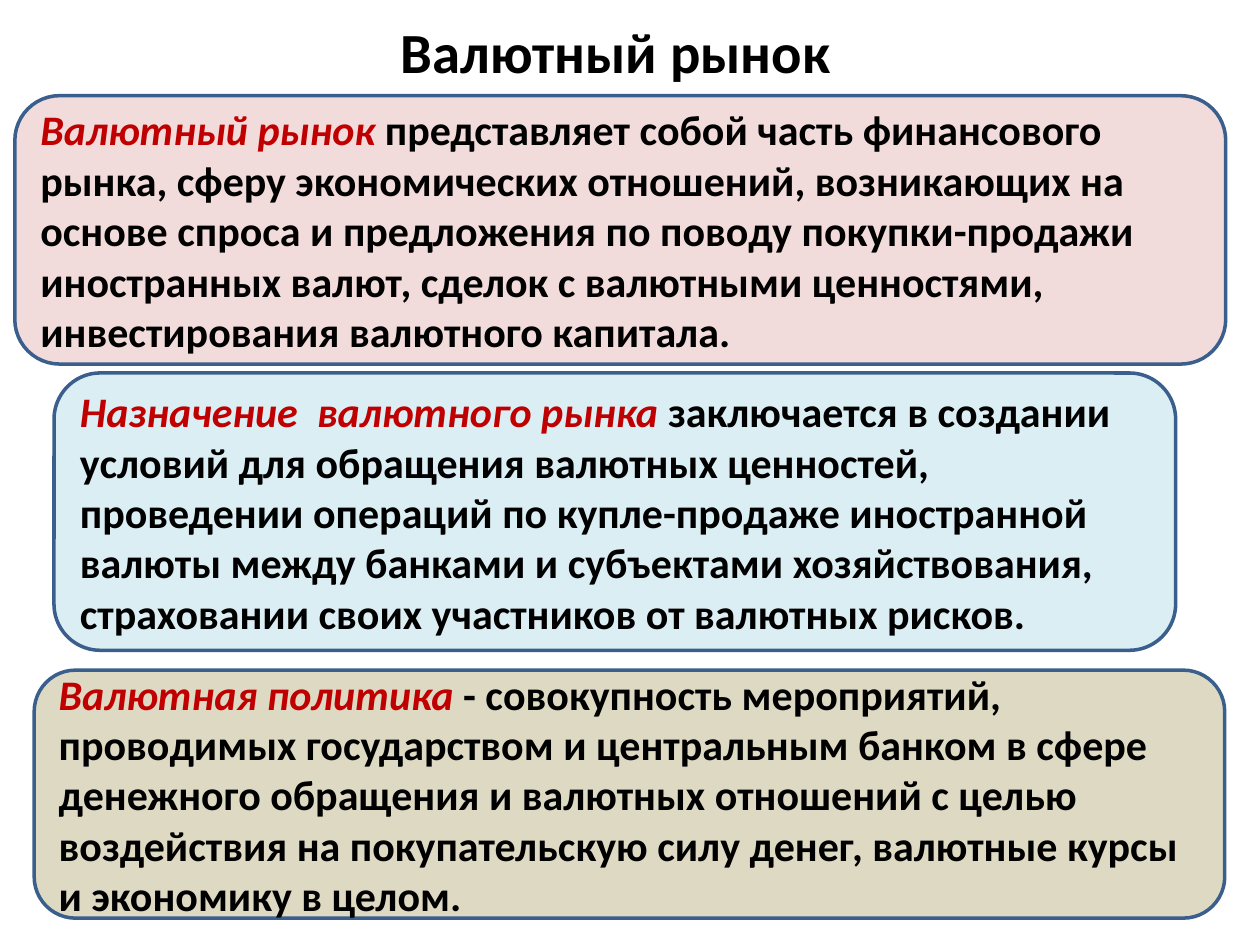
import dataclasses
import pptx
import pptx.util
import pptx.dml.color
import pptx.enum.shapes
import pptx.enum.text
from pptx.util import Cm


@dataclasses.dataclass(frozen=True)
class Theme:
    font: str = "Calibri"
    title_size: float = 32.4
    body_size: float = 24
    line_width: float = 2
    text: str = "000000"
    term: str = "C00000"
    outline: str = "3A5F8C"
    rose: str = "F2DCDB"
    sky: str = "DBEEF4"
    sand: str = "DDD9C3"


def color(value):
    return pptx.dml.color.RGBColor.from_string(value)


class SlideBuilder:
    def __init__(self, slide, theme):
        self.slide = slide
        self.theme = theme

    def format_font(self, paragraph, size):
        paragraph.font.name = self.theme.font
        paragraph.font.size = pptx.util.Pt(size)
        paragraph.font.bold = True
        paragraph.font.color.rgb = color(self.theme.text)

    def title(self, text, left, top, width, height):
        shape = self.slide.shapes.title
        shape.left, shape.top = Cm(left), Cm(top)
        shape.width, shape.height = Cm(width), Cm(height)
        frame = shape.text_frame
        frame.text = text
        frame.auto_size = pptx.enum.text.MSO_AUTO_SIZE.NONE
        frame.vertical_anchor = pptx.enum.text.MSO_ANCHOR.MIDDLE
        paragraph = frame.paragraphs[0]
        paragraph.alignment = pptx.enum.text.PP_ALIGN.CENTER
        self.format_font(paragraph, self.theme.title_size)

    def definition(self, term, text, fill, left, top, width, height):
        shape = self.slide.shapes.add_shape(
            pptx.enum.shapes.MSO_SHAPE.ROUNDED_RECTANGLE,
            Cm(left), Cm(top), Cm(width), Cm(height))
        shape.shadow.inherit = False
        shape.fill.solid()
        shape.fill.fore_color.rgb = color(fill)
        shape.line.color.rgb = color(self.theme.outline)
        shape.line.width = pptx.util.Pt(self.theme.line_width)
        frame = shape.text_frame
        frame.word_wrap = True
        frame.vertical_anchor = pptx.enum.text.MSO_ANCHOR.MIDDLE
        paragraph = frame.paragraphs[0]
        paragraph.alignment = pptx.enum.text.PP_ALIGN.LEFT
        self.format_font(paragraph, self.theme.body_size)
        term_run = paragraph.add_run()
        term_run.text = term + " "
        term_run.font.italic = True
        term_run.font.color.rgb = color(self.theme.term)
        paragraph.add_run().text = text


def main():
    presentation = pptx.Presentation()
    presentation.slide_width = Cm(25.4)
    presentation.slide_height = Cm(19.05)
    theme = Theme()
    slide = presentation.slides.add_slide(presentation.slide_layouts[5])
    builder = SlideBuilder(slide, theme)
    builder.title("Валютный рынок", 0.69, 0.33, 23.44, 1.4)
    builder.definition(
        "Валютный рынок",
        "представляет собой часть финансового рынка, сферу экономических "
        "отношений, возникающих на основе спроса и предложения по поводу "
        "покупки-продажи иностранных валют, сделок с валютными ценностями, "
        "инвестирования валютного капитала.",
        theme.rose, 0.3, 1.93, 24.41, 5.41)
    builder.definition(
        "Назначение  валютного рынка",
        "заключается в создании условий для обращения валютных ценностей, "
        "проведении операций по купле-продаже иностранной валюты между "
        "банками и субъектами хозяйствования, страховании своих участников "
        "от валютных рисков.",
        theme.sky, 1.09, 7.52, 22.61, 5.59)
    builder.definition(
        "Валютная политика",
        "- совокупность мероприятий, проводимых государством и центральным "
        "банком в сфере денежного обращения и валютных отношений с целью "
        "воздействия на покупательскую силу денег, валютные курсы и "
        "экономику в целом.",
        theme.sand, 0.69, 13.51, 24, 5)
    presentation.save("out.pptx")


if __name__ == "__main__":
    main()
